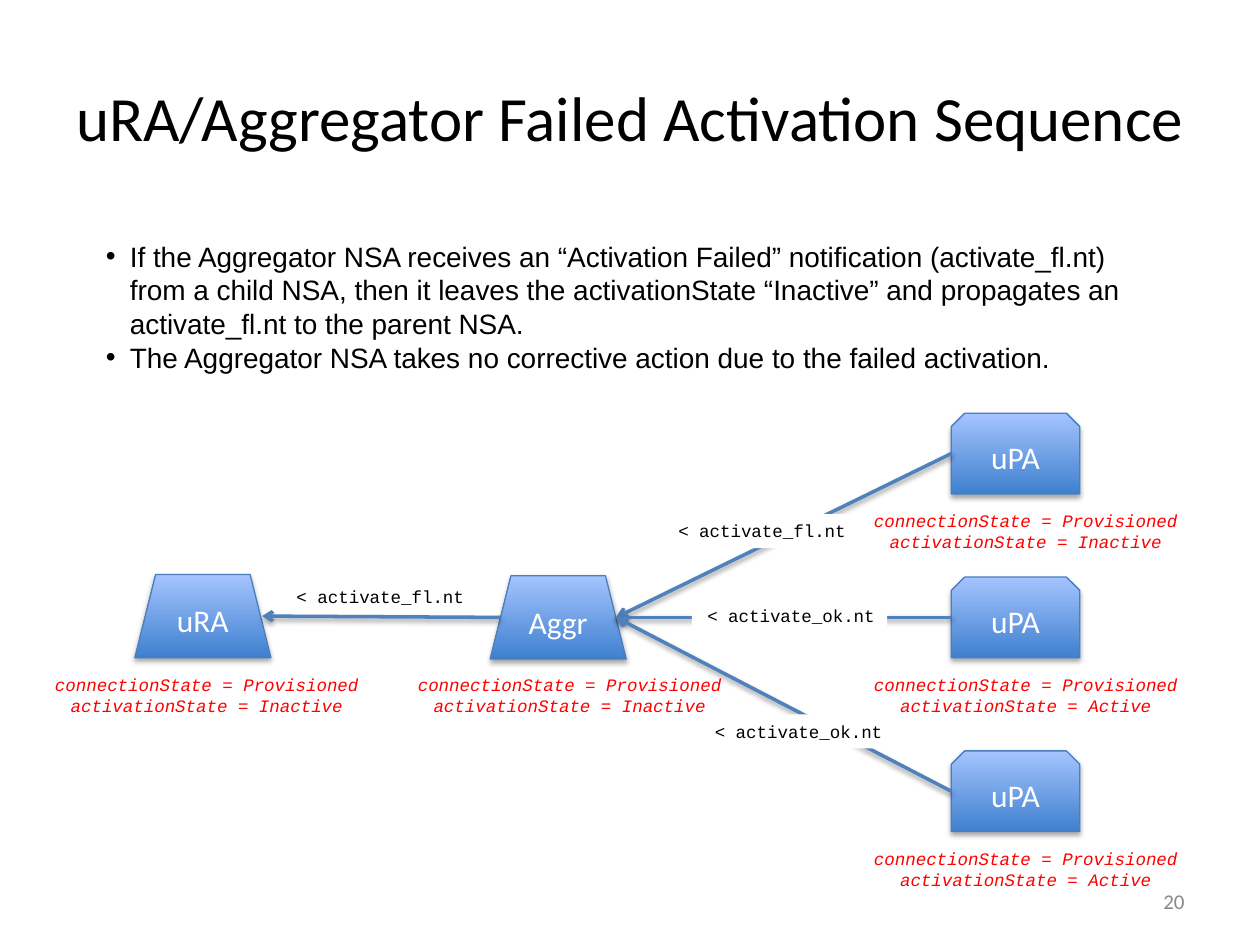
from lxml import etree
from pptx import Presentation
from pptx.dml.color import RGBColor
from pptx.enum.shapes import MSO_CONNECTOR, MSO_SHAPE
from pptx.enum.text import MSO_ANCHOR, MSO_AUTO_SIZE, PP_ALIGN
from pptx.oxml.ns import qn
from pptx.util import Inches, Pt

STRAIGHT = MSO_CONNECTOR.STRAIGHT
TRAPEZOID = MSO_SHAPE.TRAPEZOID
SNIPPED = MSO_SHAPE.SNIP_2_SAME_RECTANGLE
MIDDLE, TOP = MSO_ANCHOR.MIDDLE, MSO_ANCHOR.TOP
CENTER, LEFT, RIGHT = PP_ALIGN.CENTER, PP_ALIGN.LEFT, PP_ALIGN.RIGHT
NO_AUTOFIT = MSO_AUTO_SIZE.NONE

BLACK, WHITE, RED, GRAY = "000000", "FFFFFF", "FF0000", "898989"
NODE_DARK, NODE_LIGHT, NODE_EDGE, ARROW = "3F80CE", "A4C4FF", "4B7EBC", "4F81BD"
HEADING_FONT, BODY_FONT, CODE_FONT = "Calibri", "Arial", "Courier New"


def color(value):
    return RGBColor.from_string(value)


class SequenceSlide:
    def __init__(self, slide):
        self.slide = slide
        self.shapes = slide.shapes

    def place(self, shape, left, top, width, height):
        shape.left, shape.top = Inches(left), Inches(top)
        shape.width, shape.height = Inches(width), Inches(height)

    def style_text(self, shape, text, size, font, fill, align=CENTER, anchor=TOP,
                   italic=False, wrap=True):
        frame = shape.text_frame
        frame.text = text
        frame.word_wrap = wrap
        frame.auto_size = NO_AUTOFIT
        frame.vertical_anchor = anchor
        for paragraph in frame.paragraphs:
            paragraph.alignment = align
            for run in paragraph.runs:
                run.font.size = Pt(size)
                run.font.name = font
                run.font.italic = italic
                run.font.color.rgb = color(fill)

    def shadow(self, shape, opacity, distance):
        properties = shape._element.spPr
        effects = properties.find(qn("a:effectLst"))
        if effects is None:
            effects = etree.SubElement(properties, qn("a:effectLst"))
        outer = etree.SubElement(effects, qn("a:outerShdw"), blurRad=str(Pt(3.1)),
                                 dist=str(Pt(distance)), dir="5400000", rotWithShape="0")
        black = etree.SubElement(outer, qn("a:srgbClr"), val=BLACK)
        etree.SubElement(black, qn("a:alpha"), val=str(opacity * 1000))

    def title(self, text):
        title = self.shapes.title
        self.place(title, 0.5, 0.3, 9, 1.25)
        self.style_text(title, text, 36, HEADING_FONT, BLACK, anchor=MIDDLE)

    def bullets(self, items):
        body = self.slide.placeholders[1]
        self.place(body, 0.74, 1.85, 8.36, 1.18)
        self.style_text(body, "\n".join(items), 16, BODY_FONT, BLACK, LEFT)
        for paragraph in body.text_frame.paragraphs:
            paragraph.space_before = Pt(0)
            indents = paragraph._p.get_or_add_pPr()
            indents.set("marL", str(Inches(0.19)))
            indents.set("indent", str(Inches(-0.19)))

    def text(self, left, top, width, height, text, size, font, fill, **style):
        box = self.shapes.add_textbox(Inches(left), Inches(top), Inches(width), Inches(height))
        self.style_text(box, text, size, font, fill, **style)
        return box

    def node(self, kind, left, top, width, height, name):
        node = self.shapes.add_shape(kind, Inches(left), Inches(top),
                                     Inches(width), Inches(height))
        node.fill.gradient()
        node.fill.gradient_angle = 90
        for stop, shade in zip(node.fill.gradient_stops, (NODE_DARK, NODE_LIGHT)):
            stop.color.rgb = color(shade)
        node.line.color.rgb = color(NODE_EDGE)
        node.line.width = Pt(0.75)
        node.shadow.inherit = False
        self.shadow(node, 35, 1.8)
        self.style_text(node, name, 18, HEADING_FONT, WHITE, anchor=MIDDLE)

    def state(self, left, top, activation):
        lines = f"connectionState = Provisioned\nactivationState = {activation}"
        self.text(left, top, 2.7, 0.44, lines, 10, CODE_FONT, RED, italic=True)

    def arrow(self, start, end):
        arrow = self.shapes.add_connector(STRAIGHT, *map(Inches, start + end))
        arrow.line.color.rgb = color(ARROW)
        arrow.line.width = Pt(2)
        outline = arrow._element.spPr.find(qn("a:ln"))
        etree.SubElement(outline, qn("a:tailEnd"), type="arrow")
        self.shadow(arrow, 38, 1.6)

    def message(self, left, top, name):
        label = self.text(left, top, 1.55, 0.27, f"< {name}", 10, CODE_FONT, BLACK,
                          align=RIGHT, wrap=False)
        label.fill.solid()
        label.fill.fore_color.rgb = color(WHITE)


def main():
    prs = Presentation()
    prs.slide_width, prs.slide_height = Inches(10), Inches(7.5)
    page = SequenceSlide(prs.slides.add_slide(prs.slide_layouts[1]))

    page.title("uRA/Aggregator Failed Activation Sequence")
    page.bullets([
        "If the Aggregator NSA receives an “Activation Failed” notification "
        "(activate_fl.nt) from a child NSA, then it leaves the activationState "
        "“Inactive” and propagates an activate_fl.nt to the parent NSA.",
        "The Aggregator NSA takes no corrective action due to the failed activation.",
    ])

    for name, left, top, state_left in (("uRA", 1.07, 4.56, 0.29), ("Aggr", 3.89, 4.57, 3.17)):
        page.node(TRAPEZOID, left, top, 1.08, 0.66, name)
        page.state(state_left, 5.3, "Inactive")

    providers = (
        (3.28, "Inactive", "activate_fl.nt", 5.26, 4.08),
        (4.58, "Active", "activate_ok.nt", 5.49, 4.75),
        (5.96, "Active", "activate_ok.nt", 5.55, 5.67),
    )
    for top, activation, notice, notice_left, notice_top in providers:
        page.node(SNIPPED, 7.55, top, 1.02, 0.64, "uPA")
        page.state(6.79, top + 0.72, activation)
        page.arrow((7.55, top + 0.32), (4.89, 4.9))
        page.message(notice_left, notice_top, notice)

    page.message(2.23, 4.6, "activate_fl.nt")
    page.arrow((3.97, 4.9), (2.08, 4.89))
    page.text(7.17, 6.95, 2.33, 0.4, "20", 12, HEADING_FONT, GRAY, align=RIGHT, anchor=MIDDLE)

    prs.save("out.pptx")


if __name__ == "__main__":
    main()
